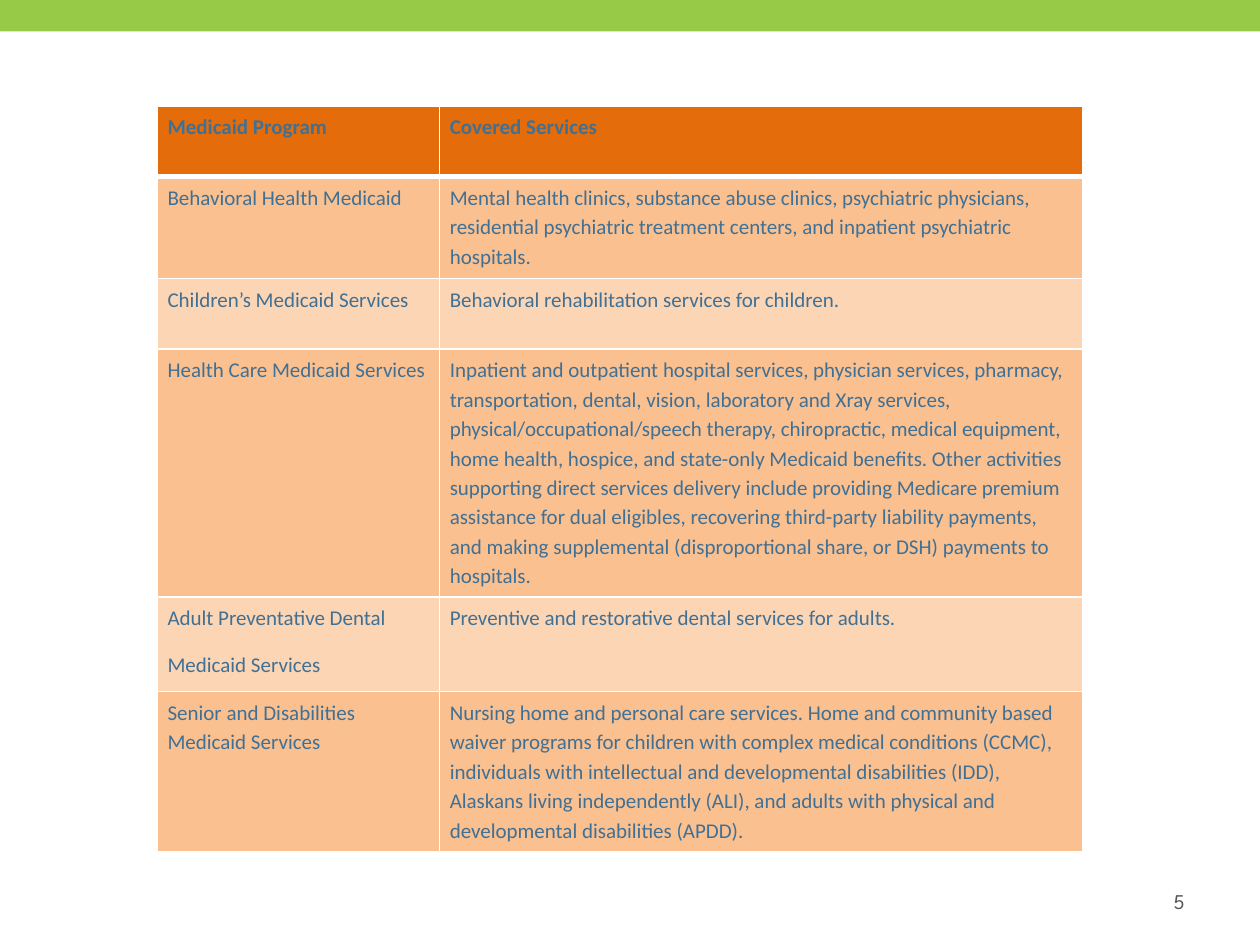
from dataclasses import dataclass

from lxml import etree
from pptx import Presentation
from pptx.dml.color import RGBColor
from pptx.enum import shapes, text
from pptx.oxml.ns import qn
from pptx.util import Inches, Pt

WHITE, GREEN, BLUE, GREY = "FFFFFF", "97CA47", "407094", "58595B"
HEADER_FILL, BAND_FILLS = "E46C0A", ("FCD5B5", "FAC090")
COLUMN_WIDTHS = (2.24, 5.1)


@dataclass
class Row:
    height: float
    program: str
    services: str


ROWS = [
    Row(0.56, "Medicaid Program", "Covered Services"),
    Row(0.81, "Behavioral Health Medicaid",
        "Mental health clinics, substance abuse clinics, psychiatric physicians, "
        "residential psychiatric treatment centers, and inpatient psychiatric hospitals."),
    Row(0.56, "Children’s Medicaid Services",
        "Behavioral rehabilitation services for children."),
    Row(1.97, "Health Care Medicaid Services",
        "Inpatient and outpatient hospital services, physician services, pharmacy, "
        "transportation, dental, vision, laboratory and Xray services, "
        "physical/occupational/speech therapy, chiropractic, medical equipment, "
        "home health, hospice, and state-only Medicaid benefits. Other activities "
        "supporting direct services delivery include providing Medicare premium "
        "assistance for dual eligibles, recovering third-party liability payments, "
        "and making supplemental (disproportional share, or DSH) payments to hospitals."),
    Row(0.75, "Adult Preventative Dental\nMedicaid Services",
        "Preventive and restorative dental services for adults."),
    Row(1.27, "Senior and Disabilities Medicaid Services",
        "Nursing home and personal care services. Home and community based waiver "
        "programs for children with complex medical conditions (CCMC), individuals "
        "with intellectual and developmental disabilities (IDD), Alaskans living "
        "independently (ALI), and adults with physical and developmental "
        "disabilities (APDD)."),
]


def rgb(color: str) -> RGBColor:
    return RGBColor.from_string(color)


def set_attrs(obj, values: dict) -> None:
    for name, value in values.items():
        setattr(obj, name, value)


def format_font(font, name: str, color: str, bold: bool = False) -> None:
    set_attrs(font, {"name": name, "size": Pt(12), "bold": bold})
    font.color.rgb = rgb(color)


def add_borders(cell, top: float, bottom: float) -> None:
    """Draw white borders; widths are in points. Call before filling the cell."""
    tc_pr = cell._tc.get_or_add_tcPr()
    for side, width in (("L", 1), ("R", 1), ("T", top), ("B", bottom)):
        ln = etree.SubElement(tc_pr, qn(f"a:ln{side}"), w=str(Pt(width)))
        fill = etree.SubElement(ln, qn("a:solidFill"))
        etree.SubElement(fill, qn("a:srgbClr"), val=WHITE)


def fill_cell(cell, content: str, row: int) -> None:
    add_borders(cell, top=3 if row == 1 else 1, bottom=3 if row == 0 else 1)
    cell.fill.solid()
    cell.fill.fore_color.rgb = rgb(BAND_FILLS[row % 2] if row else HEADER_FILL)
    set_attrs(cell, {"margin_left": Inches(0.08), "margin_right": Inches(0.08),
                     "margin_top": Inches(0.04), "margin_bottom": Inches(0.04)})
    cell.text_frame.text = content
    for p in cell.text_frame.paragraphs:
        set_attrs(p, {"line_spacing": 1.15, "space_after": Pt(10)})
        format_font(p.runs[0].font, "Calibri", BLUE, bold=row == 0)


def add_services_table(s) -> None:
    frame = s.shapes.add_table(
        len(ROWS), len(COLUMN_WIDTHS), Inches(1.25), Inches(0.84),
        Inches(sum(COLUMN_WIDTHS)), Inches(sum(row.height for row in ROWS)))
    table = frame.table
    for column, width in zip(table.columns, COLUMN_WIDTHS):
        column.width = Inches(width)
    for i, row in enumerate(ROWS):
        table.rows[i].height = Inches(row.height)
        for j, content in enumerate((row.program, row.services)):
            fill_cell(table.cell(i, j), content, i)


def add_top_band(s, width: int) -> None:
    band = s.shapes.add_shape(shapes.MSO_SHAPE.RECTANGLE, 0, 0, width, Inches(0.25))
    band.shadow.inherit = False
    band.fill.solid()
    band.fill.fore_color.rgb = rgb(GREEN)
    band.line.fill.background()


def add_page_number(s, number: int) -> None:
    box = s.shapes.add_textbox(Inches(7.17), Inches(6.95), Inches(2.33), Inches(0.4))
    tf = box.text_frame
    set_attrs(tf, {"word_wrap": True, "vertical_anchor": text.MSO_ANCHOR.MIDDLE})
    p = tf.paragraphs[0]
    p.alignment = text.PP_ALIGN.RIGHT
    r = p.add_run()
    r.text = str(number)
    format_font(r.font, "League Spartan", GREY)


def main() -> None:
    prs = Presentation()
    set_attrs(prs, {"slide_width": Inches(10), "slide_height": Inches(7.5)})
    s = prs.slides.add_slide(prs.slide_layouts[6])
    add_top_band(s, prs.slide_width)
    add_page_number(s, 5)
    add_services_table(s)
    prs.save("out.pptx")


if __name__ == "__main__":
    main()
